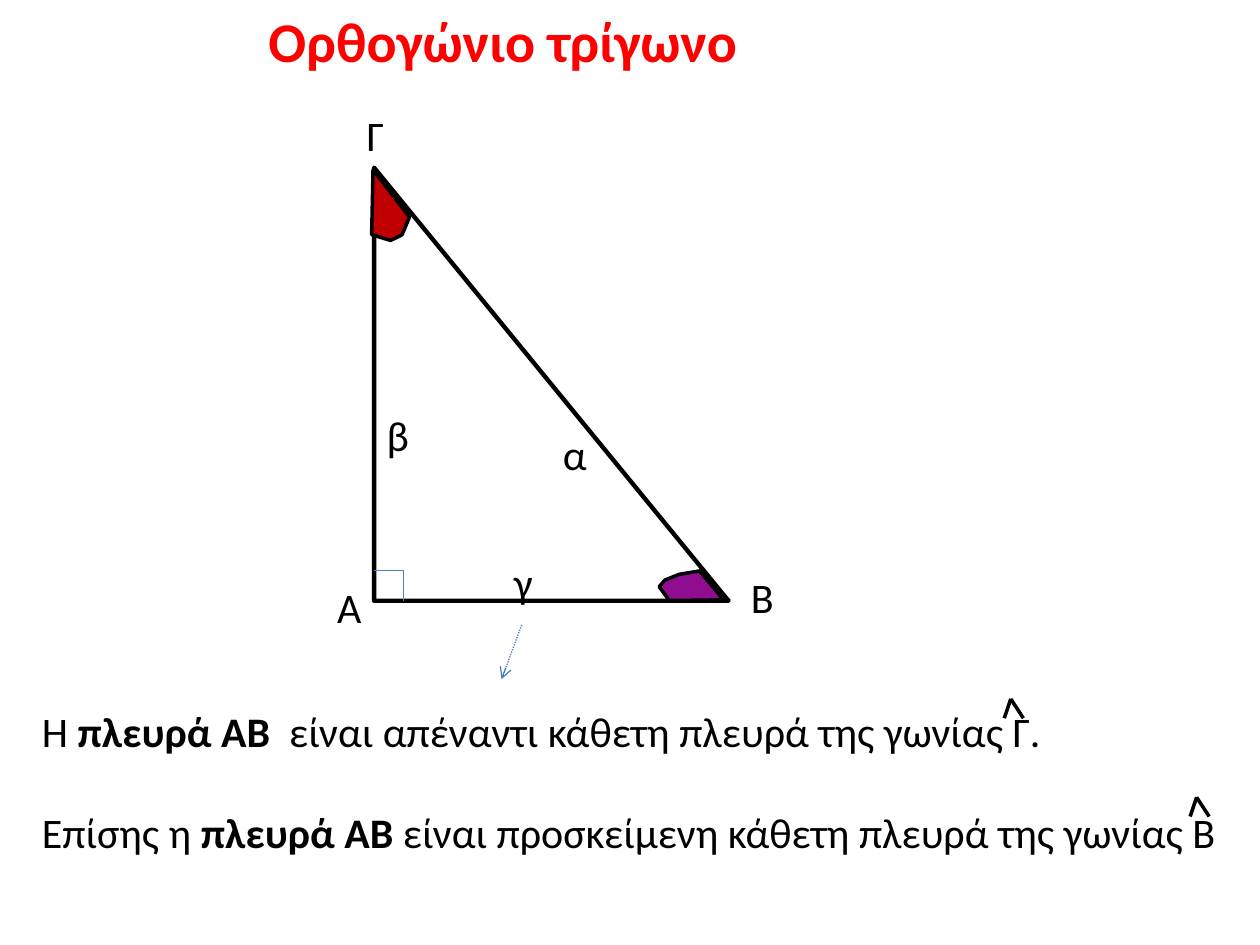
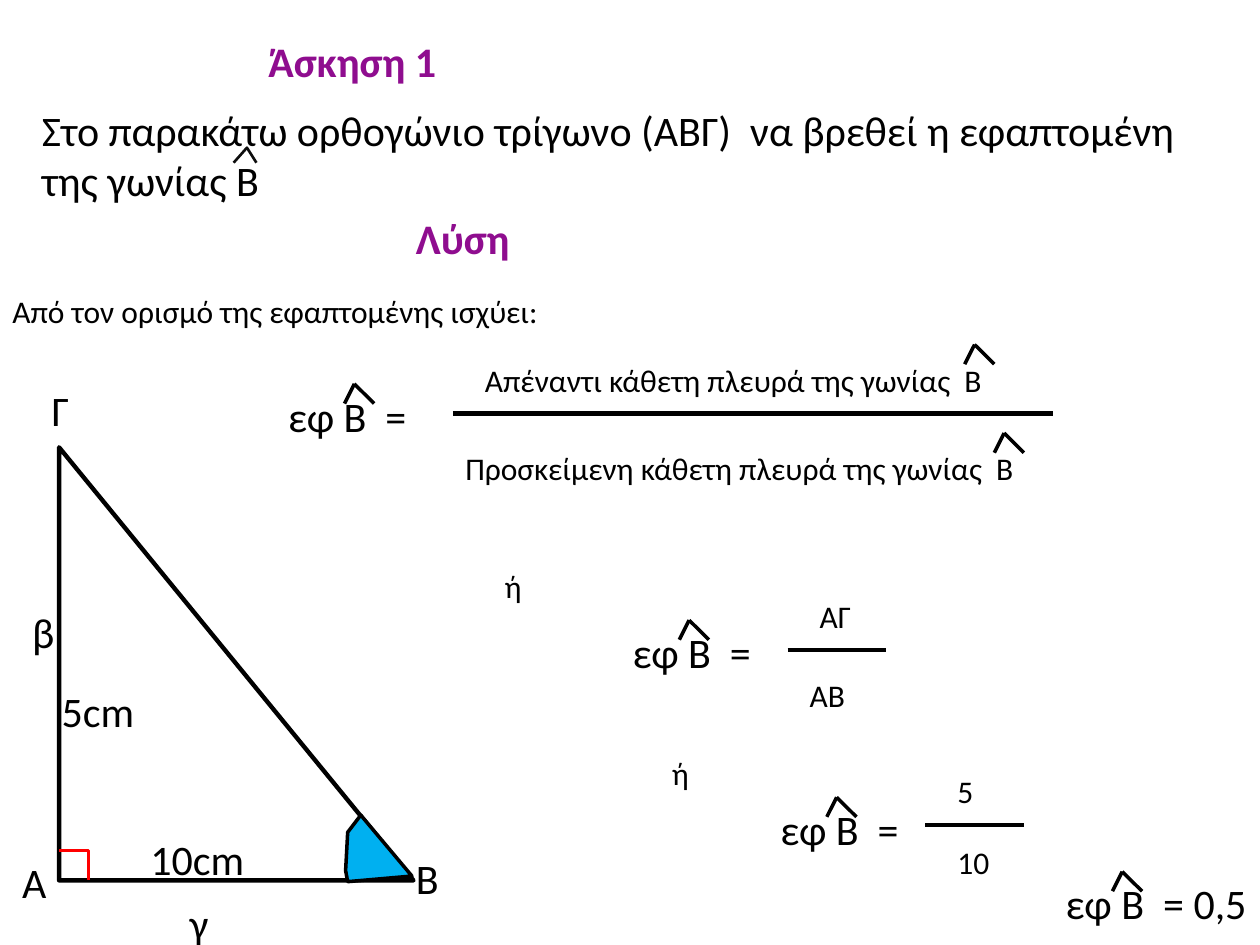
"""Build two slides about the right triangle and the tangent of an angle."""
from pptx import Presentation
from pptx.dml.color import RGBColor
from pptx.enum.dml import MSO_LINE
from pptx.enum.shapes import MSO_CONNECTOR, MSO_SHAPE
from pptx.enum.text import MSO_ANCHOR, MSO_AUTO_SIZE, PP_ALIGN
from pptx.oxml.ns import qn
from pptx.util import Pt
from lxml import etree

STRAIGHT = MSO_CONNECTOR.STRAIGHT
TRIANGLE = MSO_SHAPE.ISOSCELES_TRIANGLE
DOTTED = MSO_LINE.ROUND_DOT
TOP, LEFT = MSO_ANCHOR.TOP, PP_ALIGN.LEFT
NO_FIT, GROW = MSO_AUTO_SIZE.NONE, MSO_AUTO_SIZE.SHAPE_TO_FIT_TEXT

FONT = "Calibri"
BLACK, RED, PURPLE, BLUE = "000000", "FF0000", "8F0D8F", "4B7EBC"
LINE_HEIGHT, PADDING = 1.22, 7.2
LARGE, SMALL = 24, 18
TRIANGLE_WIDTH, TRIANGLE_HEIGHT = 202.5, 247.5
CORNER_WIDTH, CORNER_HEIGHT = 16.7, 17.2

DEFINITION = {
    "title": ("Ορθογώνιο τρίγωνο", 146.2, 0, 495, 32, RED),
    "triangle": (213.8, 95.8),
    "corner": (BLUE, 0.75),
    "angles": [
        ("C00000", [(213.2, 97), (212.4, 134.1), (223.2, 137.4), (229.8, 134.2),
                    (234, 124), (213.2, 97)]),
        (PURPLE, [(416.5, 342.8), (382.5, 343.2), (376.7, 335.3), (380, 331.5),
                  (388.2, 328.2), (399.8, 326.3), (407.5, 335.5), (411.6, 340.6),
                  (412.3, 342.4), (416.5, 342.8)]),
    ],
    "labels": [
        ("Α", 185.6, 329, 39.4, LARGE), ("Γ", 202.5, 59, 39.4, LARGE),
        ("Β", 422, 323.3, 39.4, LARGE), ("α", 314.6, 241.2, 27, LARGE),
        ("β", 213.8, 230.4, 27, LARGE), ("γ", 286.5, 314.6, 27, LARGE),
    ],
    "headings": [],
    "bars": [],
    "hats": [(577.6, 399.4), (683.8, 455.6)],
    "hat size": (3.7, 7.2, 11),
}
STATEMENTS = [
    [("Η ", False), ("πλευρά ΑΒ", True),
     ("  είναι απέναντι κάθετη πλευρά της γωνίας Γ.", False)],
    [("Επίσης η ", False), ("πλευρά ΑΒ", True),
     (" είναι προσκείμενη κάθετη πλευρά της γωνίας Β", False)],
]
STATEMENTS_AT = (16.9, 399.4, 703)
ARROW = (298.1, 357.1, 286.6, 388.1)

EXERCISE = {
    "title": ("Άσκηση 1", 146.2, 16.9, 163.5, LARGE, PURPLE),
    "triangle": (33.8, 255.6),
    "corner": (RED, 2),
    "angles": [
        ("00B0F0", [(235.4, 500.6), (206.2, 465.8), (198.7, 475.6), (197.5, 497.5),
                    (198.7, 503.8), (235.4, 500.6)]),
    ],
    "labels": [
        ("Α", 5.6, 486, 39.4, LARGE), ("Γ", 22.5, 216, 39.4, LARGE),
        ("Β", 230.6, 483.8, 39.4, LARGE), ("β", 11.3, 343.1, 27, LARGE),
        ("γ", 101.3, 509.1, 27, LARGE),
        ("5cm", 28.1, 388.1, 67.5, LARGE), ("10cm", 78.8, 472.5, 95.6, LARGE),
        ("Στο παρακάτω ορθογώνιο τρίγωνο (ΑΒΓ)  να βρεθεί η εφαπτομένη της γωνίας Β",
         16.9, 56.2, 686.2, LARGE),
        ("Από τον ορισμό της εφαπτομένης ισχύει:", 0, 163.1, 720, SMALL),
        ("εφ Β  =", 157.5, 219.4, 90, LARGE),
        ("Απέναντι κάθετη πλευρά της γωνίας  Β", 270, 202.5, 315, SMALL),
        ("Προσκείμενη κάθετη πλευρά της γωνίας  Β", 258.8, 253.1, 337.5, SMALL),
        ("ή", 281.3, 320.6, 45, SMALL),
        ("εφ Β  =", 354.4, 354.4, 90, LARGE),
        ("ΑΓ", 461.3, 337.5, 50.6, SMALL), ("ΑΒ", 455.6, 382.5, 45, SMALL),
        ("ή", 376.9, 427.5, 45, SMALL),
        ("εφ Β  =", 438.8, 455.6, 90, LARGE),
        ("5", 540, 437.6, 50.6, SMALL), ("10", 540, 478.1, 45, SMALL),
        ("εφ Β  = 0,5", 601.9, 498.1, 118.1, LARGE),
    ],
    "headings": [("Λύση", 230.6, 118.1, 298, LARGE)],
    "bars": [(258.8, 602, 236.2), (450, 506.2, 371.4), (528.8, 585, 471.6)],
    "hats": [(556.9, 196.9), (573.8, 247.5), (202.5, 219.4), (393.8, 354.4),
             (478.1, 455.6), (641.3, 498.1)],
    "hat size": (5.6, 11.3, 11.2),
}
SMALL_HAT = [(133.5, 93), (141.1, 84.4), (146.5, 93)]


def color(value):
    """Turn a hex string into a colour."""
    return RGBColor.from_string(value)


def style_font(paragraph, size, ink=BLACK, bold=False):
    """Format a whole paragraph."""
    font = paragraph.font
    font.name, font.size, font.bold = FONT, Pt(size), bold
    font.color.rgb = color(ink)


def style_line(shape, ink, width):
    """Set the outline of a shape or connector."""
    shape.line.color.rgb = color(ink)
    shape.line.width = Pt(width)


def add_title(page, text, left, top, width, size, ink):
    """Place the title in the title placeholder."""
    title = page.shapes.title
    title.left, title.top, title.width = Pt(left), Pt(top), Pt(width)
    title.height = Pt(size * LINE_HEIGHT + PADDING)
    frame = title.text_frame
    frame.text = text
    frame.vertical_anchor, frame.auto_size = TOP, NO_FIT
    frame.paragraphs[0].alignment = LEFT
    style_font(frame.paragraphs[0], size, ink, True)


def add_text(page, text, left, top, width, size, ink=BLACK, bold=False):
    """Add a text box one line high that grows with its text."""
    box = page.shapes.add_textbox(Pt(left), Pt(top), Pt(width),
                                  Pt(size * LINE_HEIGHT + PADDING))
    frame = box.text_frame
    frame.word_wrap, frame.auto_size = True, GROW
    frame.text = text
    style_font(frame.paragraphs[0], size, ink, bold)
    return frame


def add_line(shapes, left, top, right, bottom, ink=BLACK, width=2):
    """Add a straight line without a shadow."""
    line = shapes.add_connector(STRAIGHT, Pt(left), Pt(top), Pt(right), Pt(bottom))
    style_line(line, ink, width)
    etree.SubElement(line._element.spPr, qn("a:effectLst"))
    return line


def add_outline(page, points, ink=BLACK, width=2, fill=None):
    """Draw a path through the points, filled if a fill is given."""
    start, *others = [(Pt(x), Pt(y)) for x, y in points]
    builder = page.shapes.build_freeform(*start)
    builder.add_line_segments(others, close=fill is not None)
    shape = builder.convert_to_shape()
    finish_shape(shape, ink, width, fill)


def finish_shape(shape, ink, width, fill=None):
    """Remove the shadow and set fill and outline."""
    shape.shadow.inherit = False
    if fill:
        shape.fill.solid()
        shape.fill.fore_color.rgb = color(fill)
    else:
        shape.fill.background()
    style_line(shape, ink, width)


def add_triangle(page, left, top, corner):
    """Draw the right triangle and its right-angle mark."""
    triangle = page.shapes.add_shape(TRIANGLE, Pt(left), Pt(top),
                                     Pt(TRIANGLE_WIDTH), Pt(TRIANGLE_HEIGHT))
    triangle.adjustments[0] = 0
    finish_shape(triangle, BLACK, 2.5)
    bottom, right = top + TRIANGLE_HEIGHT, left + CORNER_WIDTH
    mark_top = bottom - CORNER_HEIGHT
    add_outline(page, [(left, mark_top), (right, mark_top), (right, bottom)], *corner)


def add_hat(page, apex, size):
    """Draw an angle hat as two grouped lines from its apex."""
    x, y = apex
    left, right, drop = size
    group = page.shapes.add_group_shape()
    for foot in (x - left, x + right):
        add_line(group.shapes, x, y, foot, y + drop)


def build_page(deck, content):
    """Add a slide with its title, triangle, texts and hats."""
    page = deck.slides.add_slide(deck.slide_layouts[5])
    add_title(page, *content["title"])
    add_triangle(page, *content["triangle"], content["corner"])
    for fill, points in content["angles"]:
        add_outline(page, points, fill=fill)
    for label in content["labels"]:
        add_text(page, *label)
    for heading in content["headings"]:
        add_text(page, *heading, PURPLE, True)
    for left, right, y in content["bars"]:
        add_line(page.shapes, left, y, right, y, width=2.5)
    for apex in content["hats"]:
        add_hat(page, apex, content["hat size"])
    return page


def add_statements(page):
    """Write the two statements with the side in bold."""
    frame = add_text(page, "", *STATEMENTS_AT, LARGE)
    for index, spans in enumerate(STATEMENTS):
        paragraph = frame.add_paragraph() if index else frame.paragraphs[0]
        style_font(paragraph, LARGE)
        paragraph.space_before = Pt(index * LARGE * LINE_HEIGHT)
        for text, bold in spans:
            span = paragraph.add_run()
            span.text, span.font.bold = text, bold


def add_arrow(page):
    """Draw the dotted arrow from the side to its statement."""
    arrow = add_line(page.shapes, *ARROW, BLUE, 0.75)
    arrow.line.dash_style = DOTTED
    etree.SubElement(arrow.line._get_or_add_ln(), qn("a:tailEnd"), type="arrow")


def main():
    """Build and save the deck."""
    deck = Presentation()
    deck.slide_width, deck.slide_height = Pt(720), Pt(540)
    definition = build_page(deck, DEFINITION)
    add_statements(definition)
    add_arrow(definition)
    exercise = build_page(deck, EXERCISE)
    add_outline(exercise, SMALL_HAT, "0D0D0D", 1.5)
    deck.save("out.pptx")


if __name__ == "__main__":
    main()
